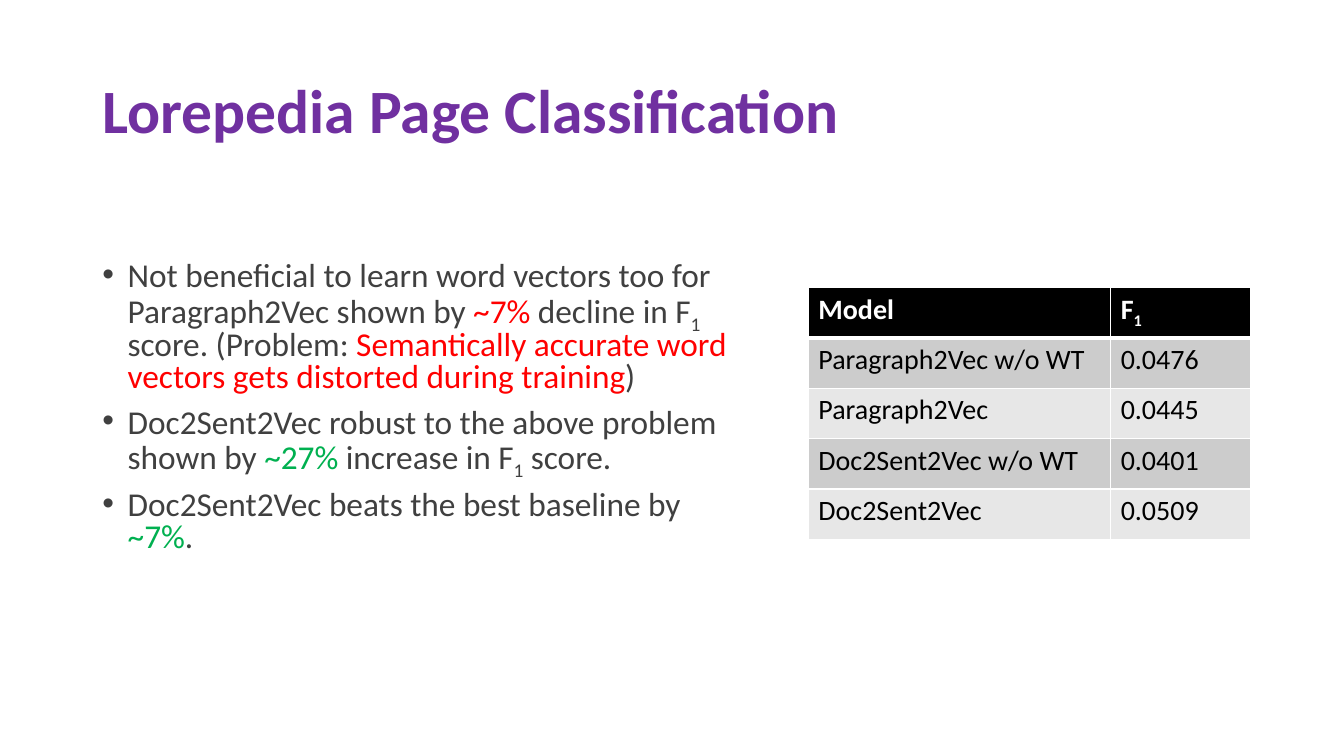
from lxml import etree
from pptx import Presentation
from pptx.dml.color import RGBColor
from pptx.enum.text import MSO_ANCHOR
from pptx.oxml.ns import qn
from pptx.util import Cm, Pt

MIDDLE = MSO_ANCHOR.MIDDLE
PURPLE = RGBColor(0x70, 0x30, 0xA0)
GREY = RGBColor(0x40, 0x40, 0x40)
RED = RGBColor(0xFF, 0x00, 0x00)
GREEN = RGBColor(0x00, 0xB0, 0x50)
BLACK = RGBColor(0x00, 0x00, 0x00)
WHITE = RGBColor(0xFF, 0xFF, 0xFF)
BANDS = [RGBColor(0xE7, 0xE7, 0xE7), RGBColor(0xCC, 0xCC, 0xCC)]
FONT = "Calibri"
SUB = "subscript"


def add_runs(paragraph, pieces):
    for text, style in pieces:
        run = paragraph.add_run()
        run.text = text
        if style == SUB:
            run.font._element.set("baseline", "-25000")
        elif style is not None:
            run.font.color.rgb = style


def add_borders(cell, bottom_width):
    properties = cell._tc.get_or_add_tcPr()
    widths = {"a:lnL": 1, "a:lnR": 1, "a:lnT": 1, "a:lnB": bottom_width}
    for position, (side, width) in enumerate(widths.items()):
        line = etree.Element(qn(side), w=str(Pt(width)))
        fill = etree.SubElement(line, qn("a:solidFill"))
        etree.SubElement(fill, qn("a:srgbClr"), val=str(WHITE))
        properties.insert(position, line)


prs = Presentation()
prs.slide_width, prs.slide_height = Cm(33.87), Cm(19.05)
slide = prs.slides.add_slide(prs.slide_layouts[6])

title = slide.shapes.add_textbox(Cm(2.33), Cm(1.01), Cm(29.21), Cm(3.68)).text_frame
title.word_wrap = True
title.vertical_anchor = MIDDLE
heading = title.paragraphs[0]
heading.text = "Lorepedia Page Classification"
heading.line_spacing = 0.9
heading.font.name = FONT
heading.font.size = Pt(44)
heading.font.bold = True
heading.font.color.rgb = PURPLE

scores = [
    ("Model", "F"),
    ("Paragraph2Vec w/o WT", "0.0476"),
    ("Paragraph2Vec", "0.0445"),
    ("Doc2Sent2Vec w/o WT", "0.0401"),
    ("Doc2Sent2Vec", "0.0509"),
]
results = slide.shapes.add_table(
    len(scores), 2, Cm(20.37), Cm(7.24), Cm(11.15), Cm(6.35)
).table
results.columns[0].width = Cm(7.62)
results.columns[1].width = Cm(3.53)
for row, values in enumerate(scores):
    is_header = row == 0
    for column, value in enumerate(values):
        cell = results.cell(row, column)
        cell.fill.solid()
        cell.fill.fore_color.rgb = BLACK if is_header else BANDS[row % 2]
        add_borders(cell, 3 if is_header else 1)
        entry = cell.text_frame.paragraphs[0]
        entry.font.name = FONT
        entry.font.size = Pt(20)
        entry.font.bold = is_header
        entry.font.color.rgb = WHITE if is_header else BLACK
        add_runs(entry, [(value, None)])
add_runs(results.cell(0, 1).text_frame.paragraphs[0], [("1", SUB)])

findings = [
    [
        ("Not beneficial to learn word vectors too for Paragraph2Vec shown by ", None),
        ("~7% ", RED),
        ("decline in F", None),
        ("1", SUB),
        (" score. (Problem: ", None),
        ("Semantically accurate word vectors gets distorted during training", RED),
        (")", None),
    ],
    [
        ("Doc2Sent2Vec robust to the above problem shown by ", None),
        ("~27%", GREEN),
        (" increase in F", None),
        ("1", SUB),
        (" score.", None),
    ],
    [
        ("Doc2Sent2Vec beats the best baseline by", None),
        (" ~7%", GREEN),
        (".", None),
    ],
]
body = slide.shapes.add_textbox(Cm(2.33), Cm(6.48), Cm(16.79), Cm(8.43)).text_frame
body.word_wrap = True
for number, pieces in enumerate(findings):
    finding = body.add_paragraph() if number else body.paragraphs[0]
    finding.line_spacing = 0.8
    finding.space_before = Pt(10)
    properties = finding._p.get_or_add_pPr()
    properties.set("marL", str(Cm(0.64)))
    properties.set("indent", str(Cm(-0.64)))
    etree.SubElement(properties, qn("a:buFont"), typeface="Arial")
    etree.SubElement(properties, qn("a:buChar"), char="•")
    finding.font.name = FONT
    finding.font.size = Pt(23.8)
    finding.font.color.rgb = GREY
    add_runs(finding, pieces)

prs.save("out.pptx")
